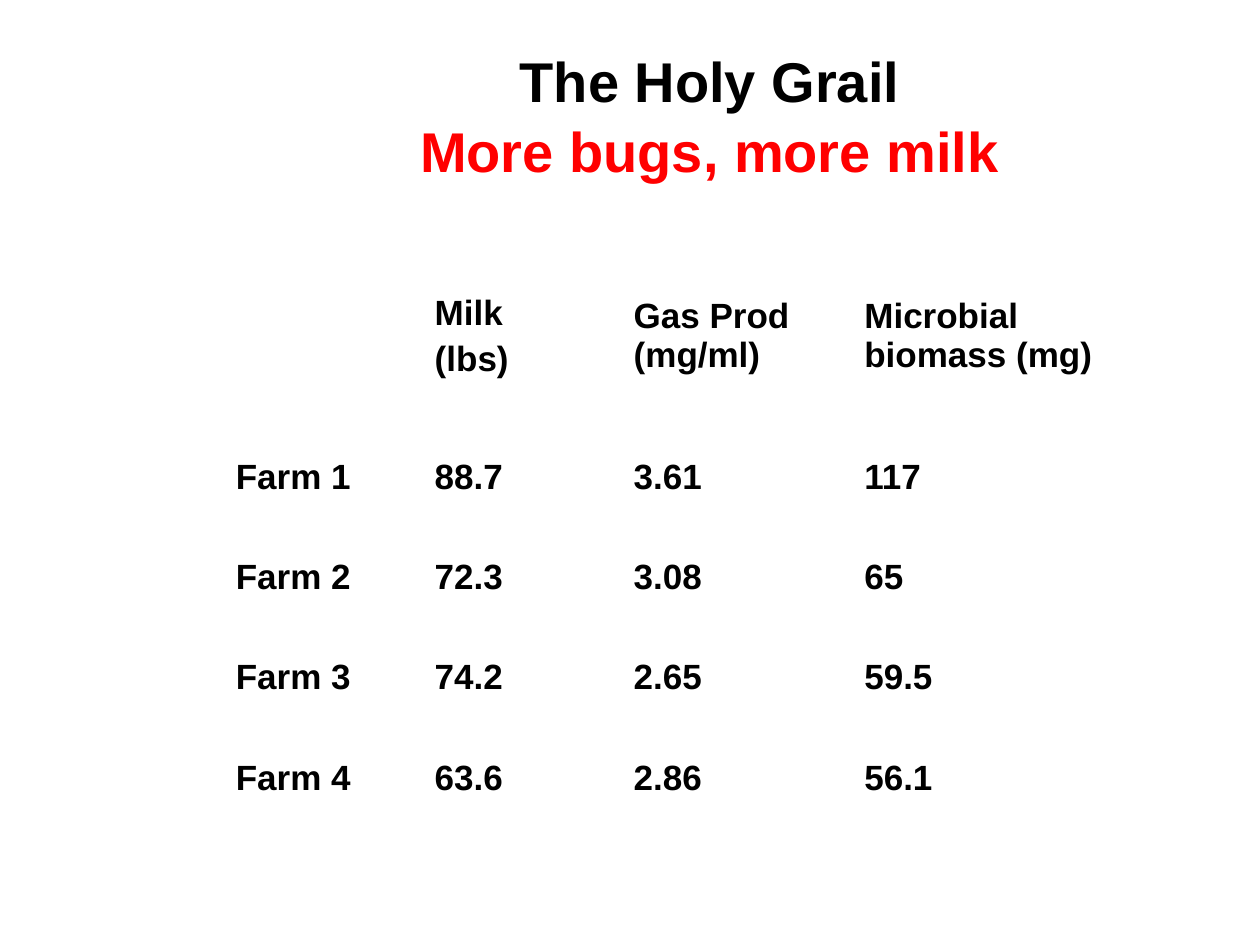
from lxml import etree
from pptx import Presentation
from pptx import util as u
from pptx.dml.color import RGBColor
from pptx.enum import text
from pptx.oxml import ns

BLACK, RED, WHITE = "000000", "FF0000", "FFFFFF"


def set_font(font, size, colour):
    font.name = "Arial"
    font.size = u.Pt(size)
    font.bold = True
    font.color.rgb = RGBColor.from_string(colour)


def add_borders(cell, colour, width):
    """Draw all four cell edges; call before setting the cell fill."""
    properties = cell._tc.get_or_add_tcPr()
    for edge in ("a:lnL", "a:lnR", "a:lnT", "a:lnB"):
        line = etree.SubElement(properties, ns.qn(edge), w=str(u.Pt(width)))
        solid = etree.SubElement(line, ns.qn("a:solidFill"))
        etree.SubElement(solid, ns.qn("a:srgbClr"), val=colour)


prs = Presentation()
prs.slide_width, prs.slide_height = u.Cm(25.4), u.Cm(19.05)
slide = prs.slides.add_slide(prs.slide_layouts[6])

# Title
title = slide.shapes.add_textbox(u.Cm(5.31), u.Cm(0.71), u.Cm(18), u.Cm(3.18)).text_frame
title.word_wrap = True
title.vertical_anchor = text.MSO_ANCHOR.MIDDLE
heading = title.paragraphs[0]
heading.alignment = text.PP_ALIGN.CENTER
heading.line_spacing = u.Pt(40)
for wording, colour in (("The Holy Grail", BLACK), ("More bugs, more milk", RED)):
    if heading.runs:
        heading.add_line_break()
    run = heading.add_run()
    run.text = wording
    set_font(run.font, 32, colour)

# Farm results
results = [
    ("", "Milk\n(lbs)", "Gas Prod (mg/ml)", "Microbial biomass (mg)"),
    ("Farm 1", "88.7", "3.61", "117"),
    ("Farm 2", "72.3", "3.08", "65"),
    ("Farm 3", "74.2", "2.65", "59.5"),
    ("Farm 4", "63.6", "2.86", "56.1"),
]
column_widths = (4.01, 4.01, 4.65, 6.55)
header_height, farm_height = 3.68, 2.02

farms = slide.shapes.add_table(
    len(results), len(column_widths), u.Cm(4.5), u.Cm(4.93),
    u.Cm(sum(column_widths)), u.Cm(header_height + 4 * farm_height)).table
farms.first_row = farms.horz_banding = False
for column, width in zip(farms.columns, column_widths):
    column.width = u.Cm(width)

for r, values in enumerate(results):
    farms.rows[r].height = u.Cm(farm_height if r else header_height)
    for c, value in enumerate(values):
        cell = farms.cell(r, c)
        add_borders(cell, WHITE, 3)
        cell.fill.background()
        cell.vertical_anchor = text.MSO_ANCHOR.MIDDLE
        cell.text = value
        for i, paragraph in enumerate(cell.text_frame.paragraphs):
            set_font(paragraph.font, 20, BLACK)
            if i:
                paragraph.space_before = u.Pt(4)

prs.save("out.pptx")
